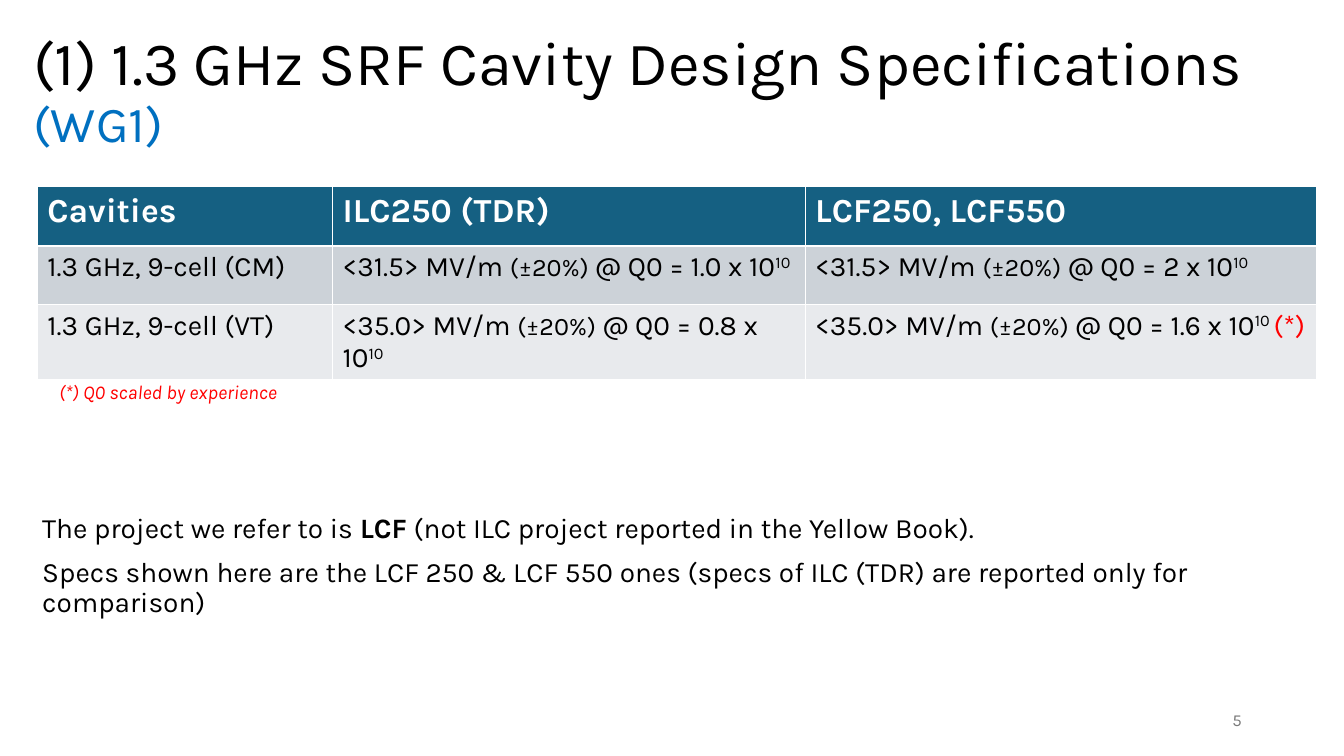
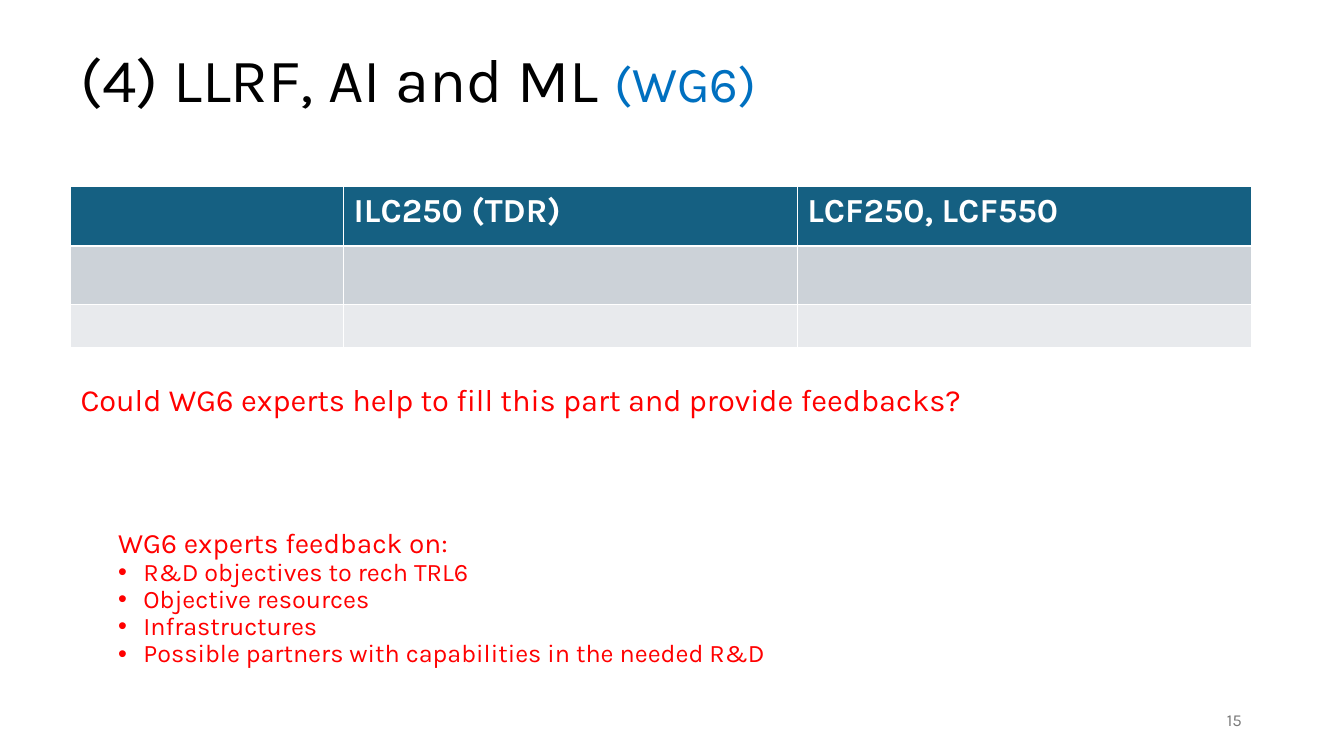
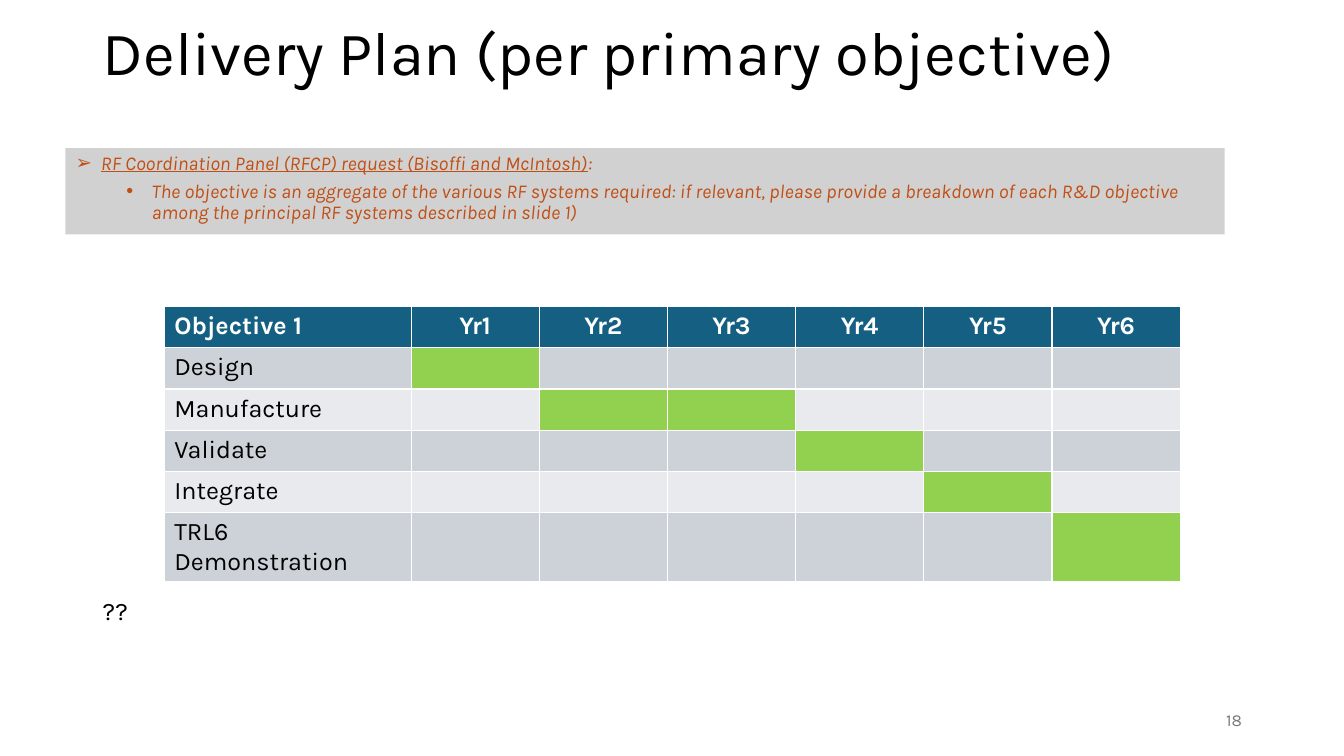
from lxml.etree import SubElement
from pptx import Presentation
from pptx.dml.color import RGBColor
from pptx.enum.text import MSO_ANCHOR, MSO_AUTO_SIZE, PP_ALIGN
from pptx.oxml.ns import qn
from pptx.util import Cm, Pt

FONT = "Karla"
BLACK, WHITE, GREY, RED, BLUE, RUST = "000000", "FFFFFF", "797979", "FF0000", "0070C0", "C04F15"
HEADER, BANDS, PANEL, ACTIVE = "156082", ("CCD2D8", "E8EAED"), "D1D1D1", "92D050"
HANG = Cm(0.64)


def rgb(code):
    return RGBColor.from_string(code)


def para(*runs, bullet=None, left=0, before=0, level=0):
    return {"runs": runs, "bullet": bullet, "left": left, "before": before, "level": level}


class Deck:
    def __init__(self):
        self.prs = Presentation()
        self.prs.slide_width, self.prs.slide_height = Cm(33.87), Cm(19.05)
        self.s = None

    def format(self, r, values):
        for name, value in {"name": FONT, **values}.items():
            if name == "color":
                r.font.color.rgb = rgb(value)
            elif name == "baseline":
                r._r.get_or_add_rPr().set(name, value)
            else:
                setattr(r.font, name, value)

    def runs(self, p, runs, base):
        for run in runs:
            text, extra = (run, {}) if isinstance(run, str) else run
            r = p.add_run()
            r.text = text
            self.format(r, {**base, **extra})

    def fill_text(self, tf, paras, base, spacing=0.9, align=PP_ALIGN.LEFT):
        tf.word_wrap = True
        tf.auto_size = MSO_AUTO_SIZE.NONE
        for i, item in enumerate(paras):
            p = tf.paragraphs[0] if i == 0 else tf.add_paragraph()
            p.level = item["level"]
            pPr = p._p.get_or_add_pPr()
            pPr.set("marL", str(item["left"]))
            pPr.set("indent", str(-HANG if item["bullet"] else 0))
            if item["bullet"]:
                SubElement(pPr, qn("a:buChar")).set("char", item["bullet"])
            else:
                SubElement(pPr, qn("a:buNone"))
            p.alignment, p.line_spacing, p.space_before = align, spacing, Pt(item["before"])
            self.runs(p, item["runs"], base)

    def place(self, sp, box):
        sp.left, sp.top, sp.width, sp.height = map(Cm, box)

    def slide(self, number, title, box):
        self.s = self.prs.slides.add_slide(self.prs.slide_layouts[1])
        sp = self.s.shapes.title
        self.place(sp, box)
        self.fill_text(sp.text_frame, [para(*title)], {"size": Pt(44), "color": BLACK})
        sp.text_frame.vertical_anchor = MSO_ANCHOR.MIDDLE
        tf = self.text((23.93, 17.65, 7.62, 1.02), str(number),
                       {"size": Pt(12), "color": GREY}, align=PP_ALIGN.RIGHT)
        tf.vertical_anchor = MSO_ANCHOR.MIDDLE

    def body(self, box, paras, base, fill=None):
        sp = self.s.placeholders[1]
        self.place(sp, box)
        if fill:
            sp.fill.solid()
            sp.fill.fore_color.rgb = rgb(fill)
        self.fill_text(sp.text_frame, paras, base)

    def text(self, box, text, base, **layout):
        tf = self.s.shapes.add_textbox(*map(Cm, box)).text_frame
        self.fill_text(tf, [para(text)], base, **layout)
        return tf

    def table(self, left, top, widths, heights, rows, head_size, size, center=False, active=()):
        frame = self.s.shapes.add_table(len(heights), len(widths), Cm(left), Cm(top),
                                        Cm(sum(widths)), Cm(sum(heights)))
        table = frame.table
        for column, width in zip(table.columns, widths):
            column.width = Cm(width)
        for i, height in enumerate(heights):
            table.rows[i].height = Cm(height)
            for j in range(len(widths)):
                cell = table.cell(i, j)
                cell.fill.solid()
                band = HEADER if i == 0 else BANDS[(i - 1) % 2]
                cell.fill.fore_color.rgb = rgb(ACTIVE if (i, j) in active else band)
                content = rows[i][j] if i < len(rows) and j < len(rows[i]) else ()
                if not content:
                    continue
                p = cell.text_frame.paragraphs[0]
                if center and j:
                    p.alignment = PP_ALIGN.CENTER
                self.runs(p, [content] if isinstance(content, str) else content,
                          {"size": Pt(size if i else head_size),
                           "color": BLACK if i else WHITE, "bold": i == 0})


def gradient(field, quality, *extra):
    return [f"<{field}> MV/m ", ("(±20%) ", {"size": Pt(18)}), f"@ Q0 = {quality} x 10",
            ("10 " if extra else "10", {"baseline": "30000"}), *extra]


def group(name):
    return name, {"size": Pt(36), "color": BLUE}


def cavities(deck):
    deck.slide(5, ["(1) 1.3 GHz SRF Cavity Design Specifications ", group("(WG1)")],
               (0.58, 0.51, 32.89, 3.68))
    deck.table(0.94, 4.7, (7.44, 11.91, 12.9), SPEC_ROWS, [
        ["Cavities", *PROJECTS],
        ["1.3 GHz, 9-cell (CM)", gradient("31.5", "1.0"), gradient("31.5", "2")],
        ["1.3 GHz, 9-cell (VT)", gradient("35.0", "0.8"),
         gradient("35.0", "1.6", ("(*)", {"color": RED}))],
    ], 24, 20)
    deck.text((1.24, 9.45, 7.14, 0.86), "(*) Q0 scaled by experience",
              {"size": Pt(14), "color": RED, "italic": True}, spacing=1.0)
    deck.body((0.81, 12.83, 32.26, 2.08), [
        para("The project we refer to is ", ("LCF", {"bold": True}),
             " (not ILC project reported in the Yellow Book)."),
        para("Specs shown here are the LCF 250 & LCF 550 ones "
             "(specs of ILC (TDR) are reported only for comparison)", before=10),
    ], {"size": Pt(20), "color": BLACK})


def controls(deck):
    deck.slide(15, ["(4) LLRF, AI and ML ", group("(WG6)")], (1.78, 0.25, 30.33, 3.68))
    deck.table(1.78, 4.7, (6.88, 11.43, 11.46), SPEC_ROWS, [["", *PROJECTS]], 24, 20)
    deck.text((1.78, 9.58, 29.77, 2.01),
              "Could WG6 experts help to fill this part and provide feedbacks?",
              {"size": Pt(22), "color": RED})
    topics = ("R&D objectives to rech TRL6", "Objective resources", "Infrastructures",
              "Possible partners with capabilities in the needed R&D")
    deck.body((2.72, 13.21, 28.83, 4.47), [
        para(("WG6 experts feedback on:", {"size": Pt(20)})),
        *(para(topic, bullet="•", left=HANG) for topic in topics),
    ], {"size": Pt(18), "color": RED})


def delivery(deck):
    deck.slide(18, ["Delivery Plan (per primary objective)"], (2.34, 0.05, 29.21, 2.69))
    deck.body((1.65, 3.73, 29.21, 2.18), [
        para(("RF Coordination Panel (RFCP) request (Bisoffi and McIntosh)", {"underline": True}),
             ":", bullet="➢", left=HANG),
        para("The objective is an aggregate of the various RF systems required: if relevant, "
             "please provide a breakdown of each R&D objective among the principal RF systems "
             "described in slide 1)", bullet="•", left=3 * HANG, before=5, level=1),
    ], {"size": Pt(14), "color": RUST, "italic": True}, fill=PANEL)
    plan = {"Design": (1,), "Manufacture": (2, 3), "Validate": (4,), "Integrate": (5,),
            "TRL6 Demonstration": (6,)}
    active = {(i, year) for i, years in enumerate(plan.values(), 1) for year in years}
    deck.table(4.14, 7.72, [6.22] + [3.23] * 6, [1.04] * 6,
               [["Objective 1", *(f"Yr{n}" for n in range(1, 7))], *([step] for step in plan)],
               18, 18, center=True, active=active)
    deck.text((2.34, 14.88, 29.21, 1.8), "??", {"size": Pt(18), "color": BLACK}, spacing=1.0)


PROJECTS = ("ILC250 (TDR)", "LCF250, LCF550")
SPEC_ROWS = (1.5, 1.47, 1.09)


def main():
    deck = Deck()
    for build in (cavities, controls, delivery):
        build(deck)
    deck.prs.save("out.pptx")


if __name__ == "__main__":
    main()
